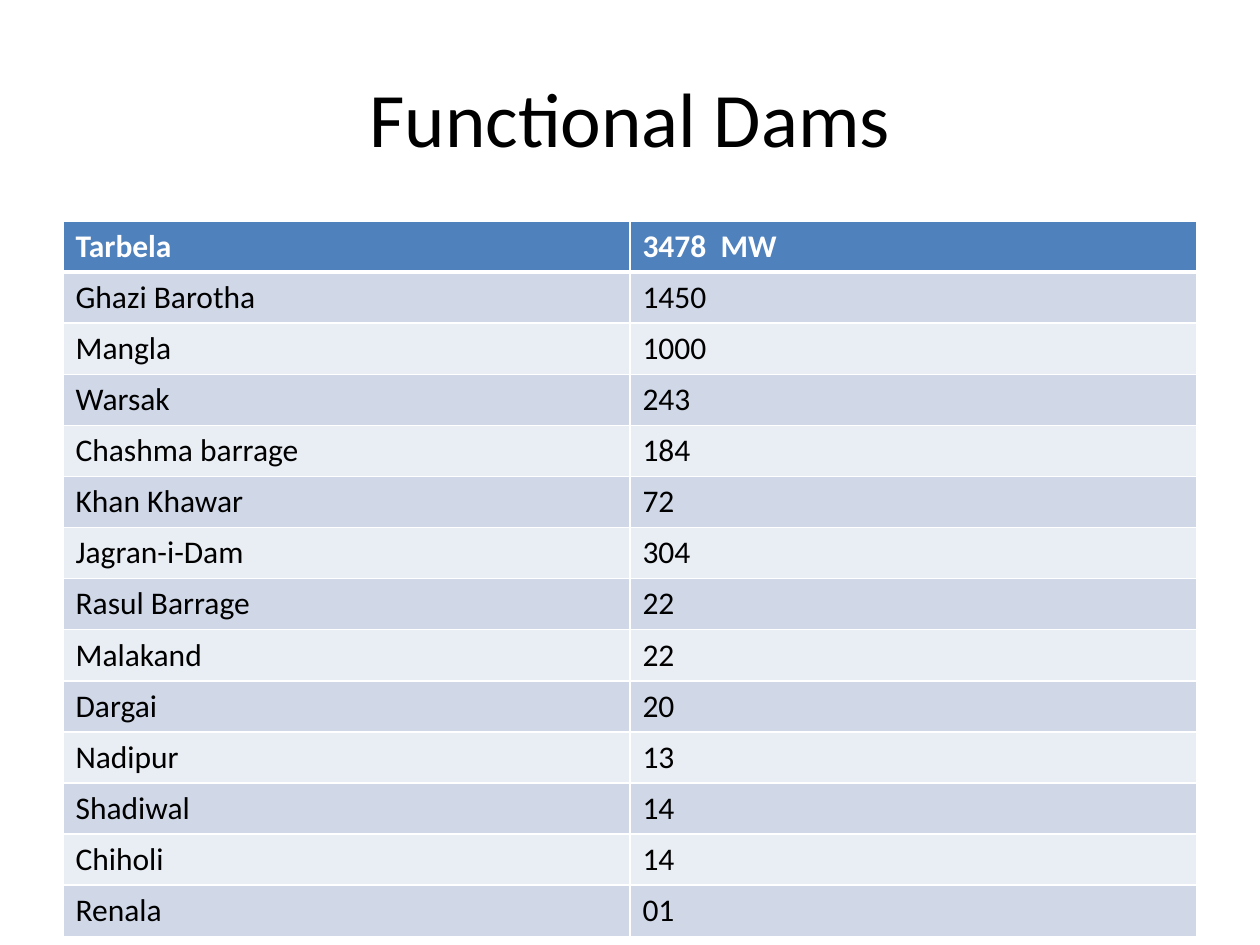
from lxml.etree import SubElement
from pptx import Presentation
from pptx.dml.color import RGBColor
from pptx.enum.text import MSO_ANCHOR as Anchor, PP_ALIGN as Align
from pptx.oxml.ns import qn
from pptx.util import Pt

PX = 914400 // 126
WHITE, BLACK = "FFFFFF", "000000"
HEAD, BANDS = "4F81BD", ("D0D8E8", "E9EDF4")
DAMS = [
    ("Tarbela", "3478  MW"),
    ("Ghazi Barotha", "1450"),
    ("Mangla", "1000"),
    ("Warsak", "243"),
    ("Chashma barrage", "184"),
    ("Khan Khawar", "72"),
    ("Jagran-i-Dam", "304"),
    ("Rasul Barrage", "22"),
    ("Malakand", "22"),
    ("Dargai", "20"),
    ("Nadipur", "13"),
    ("Shadiwal", "14"),
    ("Chiholi", "14"),
    ("Renala", "01"),
]


def rgb(color):
    return RGBColor.from_string(color)


def box(*sides):
    return [side * PX for side in sides]


def write(para, text, color, **style):
    run = para.add_run()
    run.text = text
    run.font.color.rgb = rgb(color)
    for name, value in {"name": "Calibri", **style}.items():
        setattr(run.font, name, value)


def add_title(slide, text):
    frame = slide.shapes.add_textbox(*box(63, 38, 1134, 158)).text_frame
    frame.word_wrap = True
    frame.vertical_anchor = Anchor.MIDDLE
    para = frame.paragraphs[0]
    para.alignment = Align.CENTER
    write(para, text, BLACK, size=Pt(44))


def edge(cell, side, width):
    """Draw one white border; call before the cell is filled."""
    props = cell._tc.get_or_add_tcPr()
    line = SubElement(props, qn(f"a:ln{side}"), w=str(Pt(width)))
    fill = SubElement(line, qn("a:solidFill"))
    SubElement(fill, qn("a:srgbClr"), val=WHITE)


def fill_cell(cell, row, text):
    head = row == 0
    widths = {"L": 1, "R": 1, "T": 3 if row == 1 else 1, "B": 3 if head else 1}
    for side, width in widths.items():
        edge(cell, side, width)
    cell.fill.solid()
    cell.fill.fore_color.rgb = rgb(HEAD if head else BANDS[(row - 1) % 2])
    write(cell.text_frame.paragraphs[0], text, WHITE if head else BLACK,
          size=Pt(18), bold=head)


def add_grid(slide, rows):
    frame = slide.shapes.add_table(len(rows), len(rows[0]),
                                   *box(63, 221, 1134, 716))
    for row, texts in enumerate(rows):
        for col, text in enumerate(texts):
            fill_cell(frame.table.cell(row, col), row, text)


def main():
    deck = Presentation()
    deck.slide_width, deck.slide_height = box(1260, 945)
    slide = deck.slides.add_slide(deck.slide_layouts[6])
    add_title(slide, "Functional Dams")
    add_grid(slide, DAMS)
    deck.save("out.pptx")


if __name__ == "__main__":
    main()
